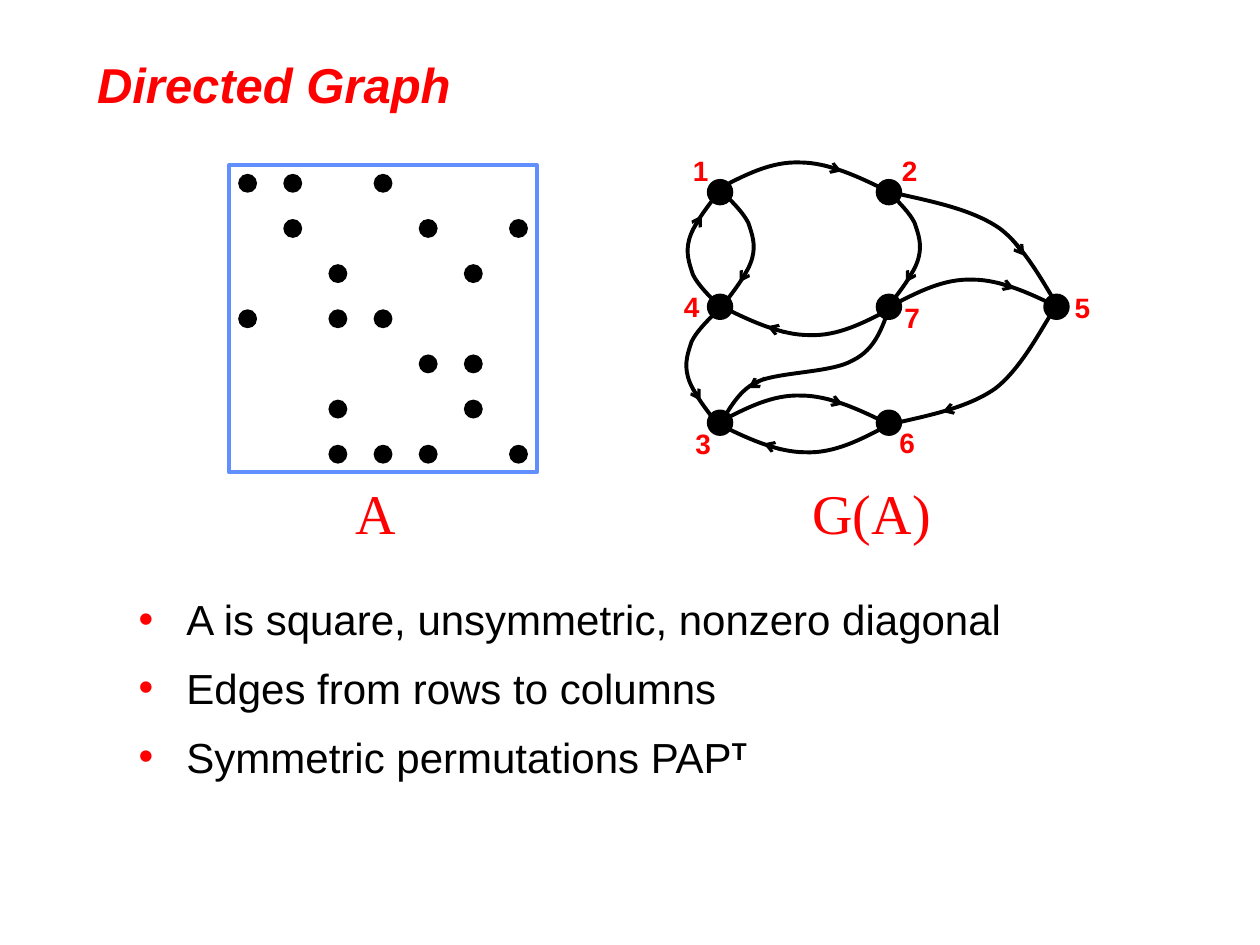
from lxml import etree
from pptx import Presentation
from pptx.dml.color import RGBColor
from pptx.enum.shapes import MSO_CONNECTOR as LINK, MSO_SHAPE as SHAPE
from pptx.enum.text import MSO_ANCHOR as ANCHOR, MSO_AUTO_SIZE as FIT, PP_ALIGN as ALIGN
from pptx.oxml.ns import qn
from pptx.util import Inches, Pt

COLORS = {"accent": "FF0000", "ink": "000000", "frame": "618FFD"}


def add_span(para, text, size, font="Arial", color="accent", bold=False, italic=False):
    span = para.add_run()
    span.text = text
    span.font.size, span.font.name = Pt(size), font
    span.font.bold, span.font.italic = bold, italic
    span.font.color.rgb = RGBColor.from_string(COLORS[color])
    return span


def add_dot(left, top, size):
    dot = page.shapes.add_shape(SHAPE.OVAL, left, top, size, size)
    dot.shadow.inherit = False
    dot.fill.solid()
    dot.fill.fore_color.rgb = RGBColor.from_string(COLORS["ink"])
    dot.line.fill.background()


deck = Presentation()
deck.slide_width, deck.slide_height = Inches(10), Inches(7.5)
page = deck.slides.add_slide(deck.slide_layouts[1])

title, body = page.placeholders
title.left, title.top, title.width, title.height = map(Inches, (0.67, 0.33, 8.19, 0.67))
title.text_frame.vertical_anchor = ANCHOR.MIDDLE
title.text_frame.auto_size = FIT.NONE
title_para = title.text_frame.paragraphs[0]
title_para.alignment = ALIGN.LEFT
add_span(title_para, "Directed Graph", 28, bold=True, italic=True)

body.left, body.top, body.width, body.height = map(Inches, (1, 4.58, 8, 2.08))
body.text_frame.auto_size = FIT.NONE
points = [
    "A is square, unsymmetric, nonzero diagonal",
    "Edges from rows to columns",
    "Symmetric permutations PAP",
]
for index, point in enumerate(points):
    para = body.text_frame.add_paragraph() if index else body.text_frame.paragraphs[0]
    para.line_spacing, para.space_before = 1.2, Pt(4.8)
    props = para._p.get_or_add_pPr()
    props.set("marL", str(Inches(0.38)))
    props.set("indent", str(Inches(-0.38)))
    bullet_color = etree.SubElement(props, qn("a:buClr"))
    etree.SubElement(bullet_color, qn("a:srgbClr")).set("val", COLORS["accent"])
    etree.SubElement(props, qn("a:buChar")).set("char", "•")
    add_span(para, point, 24, color="ink")
superscript = add_span(para, "T", 24, color="ink", bold=True)
superscript._r.get_or_add_rPr().set("baseline", "30000")

frame = page.shapes.add_shape(
    SHAPE.RECTANGLE, Inches(1.82), Inches(1.31), Inches(2.44), Inches(2.44))
frame.shadow.inherit = False
frame.fill.background()
frame.line.color.rgb = RGBColor.from_string(COLORS["frame"])
frame.line.width = Pt(2.25)

nonzeros = [(0, 1, 3), (1, 4, 6), (2, 5), (0, 2, 3), (4, 5), (2, 5), (2, 3, 4, 6)]
pitch = Inches(2.15) // 6
for row, columns in enumerate(nonzeros):
    for column in columns:
        add_dot(Inches(1.89) + column * pitch, Inches(1.38) + row * pitch, Inches(0.15))

nodes = [(5.61, 1.42), (6.95, 1.42), (5.61, 2.33), (6.95, 2.33),
         (8.28, 2.33), (5.61, 3.25), (6.95, 3.25)]
for left, top in nodes:
    add_dot(Inches(left), Inches(top), Inches(0.21))

bow = [(0, 0), (0.21, -0.11), (0.42, -0.22), (0.65, -0.21),
       (0.87, -0.21), (1.11, -0.1), (1.35, 0.02)]
side = [(0, 0), (0.08, 0.08), (0.16, 0.16), (0.2, 0.24), (0.23, 0.33),
        (0.26, 0.41), (0.23, 0.52), (0.2, 0.63), (0.1, 0.76), (0, 0.89)]
sweep = [(0, 0), (-0.08, 0.11), (-0.26, 0.48), (-0.48, 0.64),
         (-0.7, 0.79), (-1.01, 0.85), (-1.32, 0.92)]
wave = [(0, 0), (0.05, -0.04), (0.12, -0.23), (0.29, -0.31), (0.47, -0.39),
        (0.88, -0.38), (1.05, -0.48), (1.23, -0.57), (1.28, -0.74), (1.34, -0.9)]
bow_arrow = [(0.84, -0.19), (0.98, -0.14)]
side_arrow = [(0.21, 0.58), (0.13, 0.71)]
sweep_arrow = [(-0.74, 0.77), (-0.89, 0.82)]
sweep_back_arrow = [(-0.37, 0.54), (-0.28, 0.42)]
wave_arrow = [(0.35, -0.34), (0.22, -0.26)]

edges = [
    (bow, bow_arrow, 5.7, 1.5, 1, 1),
    (bow, bow_arrow, 7.07, 2.43, 1, 1),
    (bow, bow_arrow, 5.71, 3.35, 1, 1),
    (bow, bow_arrow, 7.04, 3.38, -1, -1),
    (bow, bow_arrow, 7.07, 2.45, -1, -1),
    (side, side_arrow, 5.7, 2.42, -1, -1),
    (side, side_arrow, 5.69, 2.47, -1, 1),
    (side, side_arrow, 5.74, 1.53, 1, 1),
    (side, side_arrow, 7.06, 1.53, 1, 1),
    (wave, wave_arrow, 5.72, 3.34, 1, 1),
    (sweep, sweep_arrow, 8.37, 2.45, 1, 1),
    (sweep, sweep_back_arrow, 8.41, 2.45, 1, -1),
]
for curve, arrow, x, y, flip_x, flip_y in edges:
    spots = [(Inches(x + flip_x * dx), Inches(y + flip_y * dy)) for dx, dy in curve]
    ends = [Inches(value) for dx, dy in arrow for value in (x + flip_x * dx, y + flip_y * dy)]

    head = page.shapes.add_connector(LINK.STRAIGHT, *ends)
    builder = page.shapes.build_freeform(*spots[0])
    builder.add_line_segments(spots[1:], close=False)
    edge = builder.convert_to_shape()
    edge.shadow.inherit = False
    edge.fill.background()

    segments = list(edge._element.iter(qn("a:lnTo")))
    for first in range(0, len(segments), 3):
        bezier = etree.SubElement(segments[first].getparent(), qn("a:cubicBezTo"))
        for segment in segments[first:first + 3]:
            bezier.append(segment[0])
            segment.getparent().remove(segment)

    for stroke, width in ((head, 1.75), (edge, 2.25)):
        stroke.line.color.rgb = RGBColor.from_string(COLORS["ink"])
        stroke.line.width = Pt(width)
    etree.SubElement(head.line._get_or_add_ln(), qn("a:tailEnd")).set("type", "arrow")
    etree.SubElement(head._element.spPr, qn("a:effectLst"))

node_style = (0.32, 0.37, 16, "Arial", True)
labels = [
    ("1", 5.4, 1.17, *node_style),
    ("2", 7.06, 1.17, *node_style),
    ("3", 5.42, 3.34, *node_style),
    ("4", 5.33, 2.25, *node_style),
    ("5", 8.43, 2.26, *node_style),
    ("6", 7.04, 3.33, *node_style),
    ("7", 7.08, 2.34, *node_style),
    ("A", 2.72, 3.75, 0.52, 0.63, 32, "Times New Roman", False),
    ("G(A)", 6.35, 3.75, 1.25, 0.63, 32, "Times New Roman", False),
]
for text, left, top, width, height, size, font, bold in labels:
    box = page.shapes.add_textbox(*map(Inches, (left, top, width, height)))
    box.text_frame.word_wrap = False
    box.text_frame.auto_size = FIT.SHAPE_TO_FIT_TEXT
    add_span(box.text_frame.paragraphs[0], text, size, font, bold=bold)

deck.save("out.pptx")
